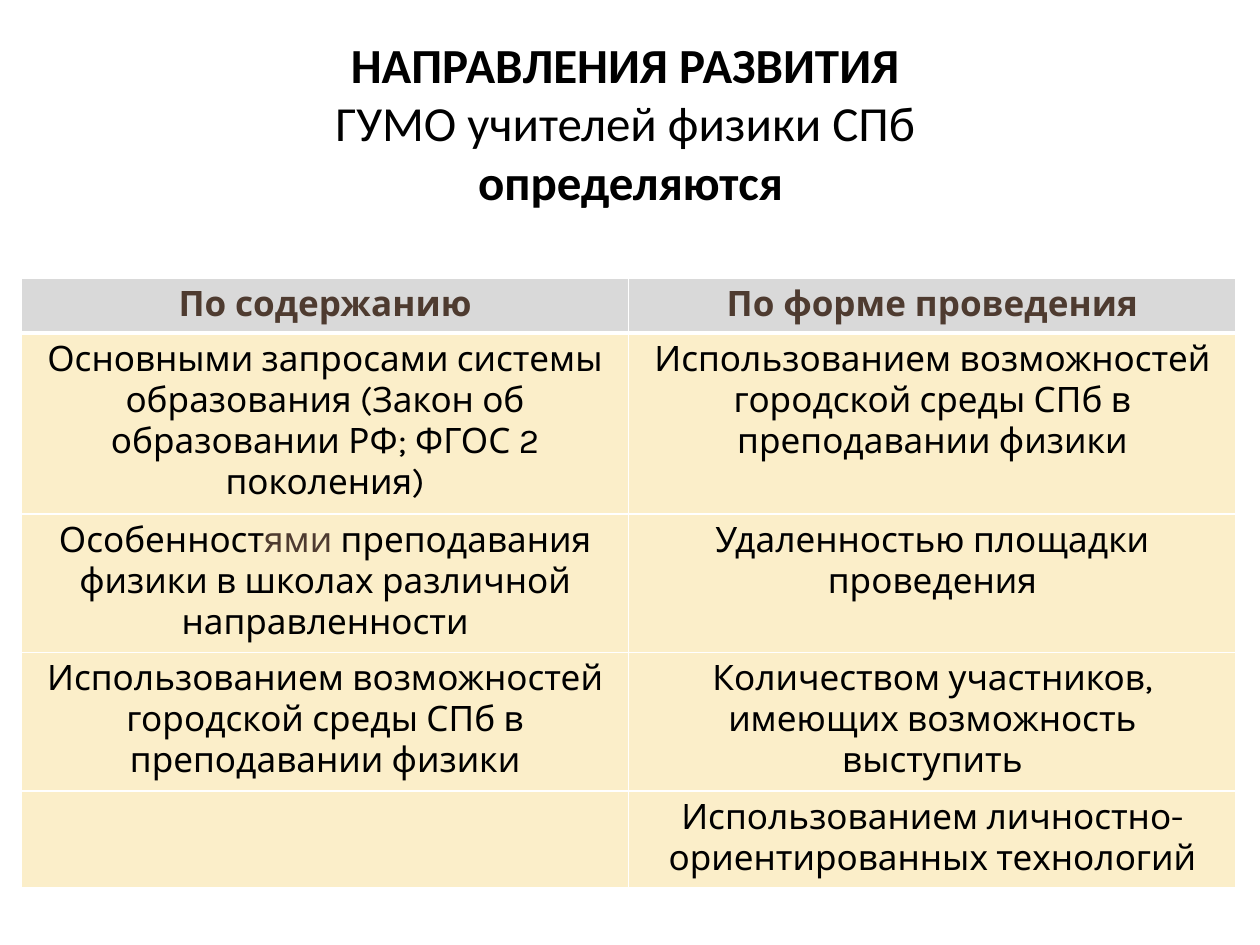
from lxml.etree import SubElement
from pptx import Presentation
from pptx.dml.color import RGBColor
from pptx.enum.text import MSO_ANCHOR, MSO_AUTO_SIZE, PP_ALIGN
from pptx.oxml.ns import qn
from pptx.util import Inches, Pt

COLORS = {"black": "000000", "brown": "4E3B30", "grey": "D9D9D9",
          "cream": "FBEEC9", "white": "FFFFFF"}
TITLE_LINES = [("НАПРАВЛЕНИЯ РАЗВИТИЯ ", True),
               ("ГУМО учителей физики СПб ", False),
               ("определяются", True)]
CITY_USE = "Использованием возможностей городской среды СПб в преподавании физики"
HEADINGS = ["По содержанию", "По форме проведения"]
DIRECTIONS = [
    ["Основными запросами системы образования (Закон об образовании РФ; ФГОС 2 поколения)",
     CITY_USE],
    [[("Особенност", "black"), ("ями", "brown"),
      (" преподавания физики в школах различной направленности", "black")],
     "Удаленностью площадки проведения"],
    [CITY_USE, "Количеством участников, имеющих возможность выступить"],
    ["", "Использованием личностно-ориентированных технологий"],
]
ROW_HEIGHTS = [0.43, 1.43, 1.1, 1.1, 0.77]
COLUMN_WIDTH = 4.82


def rgb(name):
    """Return the named colour."""
    return RGBColor.from_string(COLORS[name])


def style_run(run, font_name, size, color, bold):
    """Format one run of text."""
    run.font.name = font_name
    run.font.size = Pt(size)
    run.font.bold = bold
    run.font.color.rgb = rgb(color)


def add_title(slide):
    """Place the three-line heading in the title placeholder."""
    title = slide.shapes.title
    title.left, title.top = Inches(0.2), Inches(0.22)
    title.width, title.height = Inches(9.61), Inches(1.51)
    frame = title.text_frame
    frame.text = "\n".join(line for line, _ in TITLE_LINES)
    frame.word_wrap = True
    frame.auto_size = MSO_AUTO_SIZE.SHAPE_TO_FIT_TEXT
    frame.vertical_anchor = MSO_ANCHOR.TOP
    for paragraph, (_, bold) in zip(frame.paragraphs, TITLE_LINES):
        paragraph.alignment = PP_ALIGN.CENTER
        style_run(paragraph.runs[0], "Calibri", 28, "black", bold)


def set_borders(cell, top, bottom):
    """Draw white cell borders, with top and bottom widths in points."""
    properties = cell._tc.get_or_add_tcPr()
    for side, width in (("L", 1), ("R", 1), ("T", top), ("B", bottom)):
        line = SubElement(properties, qn(f"a:ln{side}"), w=str(Pt(width)))
        fill = SubElement(line, qn("a:solidFill"))
        SubElement(fill, qn("a:srgbClr"), val=COLORS["white"])


def fill_cell(cell, content, background, color, bold):
    """Write centred text, plain or in coloured pieces, on a background."""
    cell.fill.solid()
    cell.fill.fore_color.rgb = rgb(background)
    paragraph = cell.text_frame.paragraphs[0]
    paragraph.alignment = PP_ALIGN.CENTER
    pieces = [(content, color)] if isinstance(content, str) else content
    for text, piece_color in pieces:
        if text:
            run = paragraph.add_run()
            run.text = text
            style_run(run, "Karla", 20, piece_color, bold)


def add_directions_table(slide):
    """Add the table of directions by content and by form."""
    rows = [HEADINGS] + DIRECTIONS
    table = slide.shapes.add_table(
        len(rows), len(HEADINGS), Inches(0.17), Inches(2.21),
        Inches(COLUMN_WIDTH * len(HEADINGS)), Inches(sum(ROW_HEIGHTS))).table
    for column in table.columns:
        column.width = Inches(COLUMN_WIDTH)
    for index, (contents, height) in enumerate(zip(rows, ROW_HEIGHTS)):
        table.rows[index].height = Inches(height)
        heading = index == 0
        background, color = ("grey", "brown") if heading else ("cream", "black")
        for cell, content in zip(table.rows[index].cells, contents):
            set_borders(cell, 3 if index == 1 else 1, 3 if heading else 1)
            fill_cell(cell, content, background, color, heading)


def main():
    """Build and save the slide."""
    deck = Presentation()
    deck.slide_width, deck.slide_height = Inches(10), Inches(7.5)
    slide = deck.slides.add_slide(deck.slide_layouts.get_by_name("Title Only"))
    add_title(slide)
    add_directions_table(slide)
    deck.save("out.pptx")


if __name__ == "__main__":
    main()
